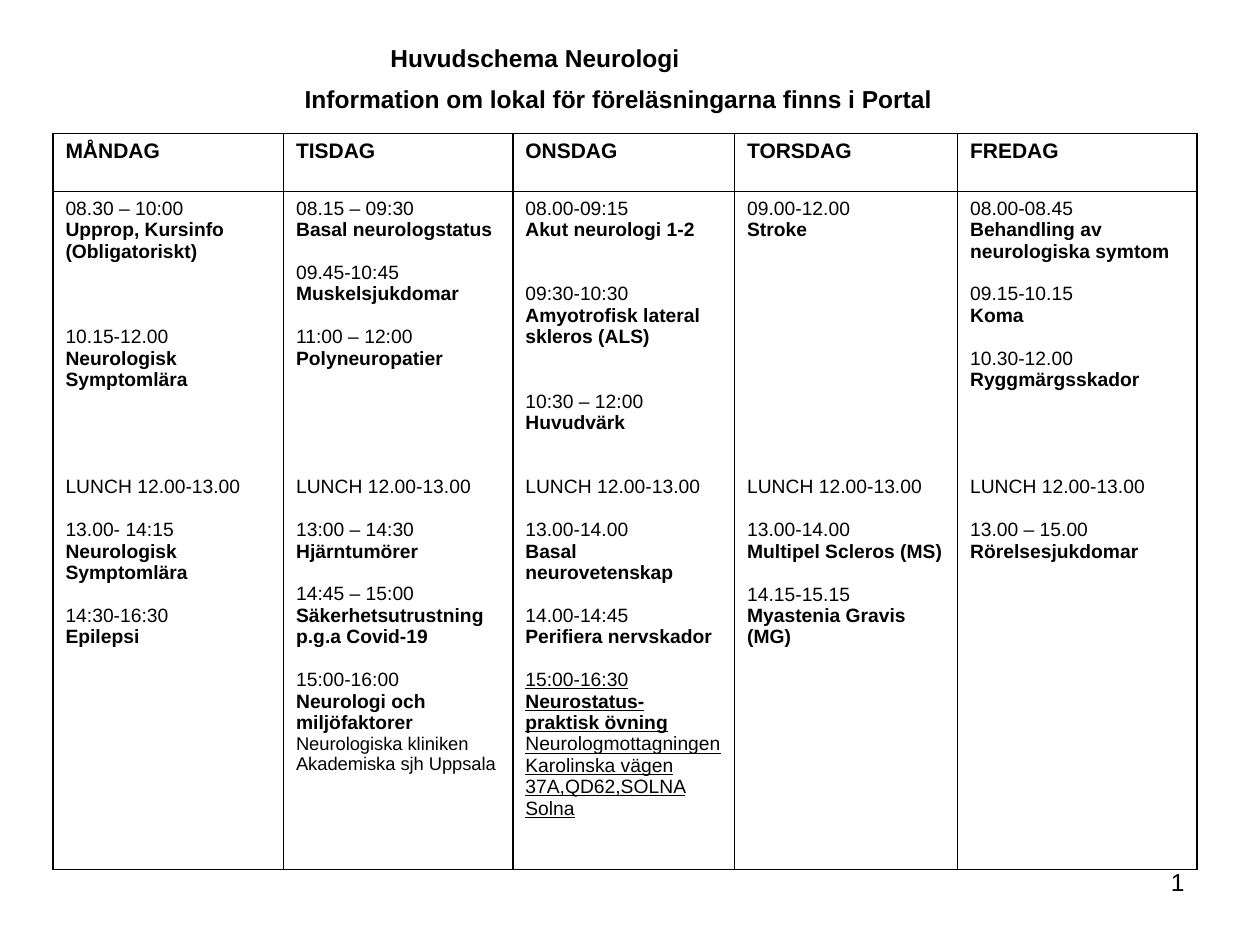
from dataclasses import dataclass

from lxml import etree
from pptx import Presentation
from pptx.dml.color import RGBColor
from pptx.enum.text import PP_ALIGN
from pptx.oxml.ns import qn
from pptx.util import Inches, Pt

BLACK = RGBColor(0, 0, 0)
WHITE = RGBColor(255, 255, 255)
FONT = "Arial"
BODY_SIZE = 11
LINE_HEIGHT = 12.25  # points per line of body text
COLUMN_WIDTHS = (1.83, 1.82, 1.76, 1.77, 1.9)
ROW_HEIGHTS = (0.46, 5.38)


@dataclass
class Session:
    """One timetable entry; gap counts the free lines above it."""
    gap: int
    time: str
    topics: tuple = ()
    places: tuple = ()
    place_size: float = BODY_SIZE
    underline: bool = False


def lunch(gap):
    return Session(gap, "LUNCH 12.00-13.00")


WEEK = {
    "MÅNDAG": [
        Session(0, "08.30 – 10:00", ("Upprop, Kursinfo", "(Obligatoriskt)")),
        Session(3, "10.15-12.00", ("Neurologisk", "Symptomlära")),
        lunch(4),
        Session(1, "13.00- 14:15", ("Neurologisk", "Symptomlära")),
        Session(1, "14:30-16:30", ("Epilepsi",)),
    ],
    "TISDAG": [
        Session(0, "08.15 – 09:30", ("Basal neurologstatus",)),
        Session(1, "09.45-10:45", ("Muskelsjukdomar",)),
        Session(1, "11:00 – 12:00", ("Polyneuropatier",)),
        lunch(5),
        Session(1, "13:00 – 14:30", ("Hjärntumörer",)),
        Session(1, "14:45 – 15:00", ("Säkerhetsutrustning p.g.a Covid-19",)),
        Session(1, "15:00-16:00", ("Neurologi och miljöfaktorer",),
                ("Neurologiska kliniken", "Akademiska sjh Uppsala"), place_size=10.5),
    ],
    "ONSDAG": [
        Session(0, "08.00-09:15", ("Akut neurologi 1-2",)),
        Session(2, "09:30-10:30", ("Amyotrofisk lateral skleros (ALS)",)),
        Session(2, "10:30 – 12:00", ("Huvudvärk",)),
        lunch(2),
        Session(1, "13.00-14.00", ("Basal neurovetenskap",)),
        Session(1, "14.00-14:45", ("Perifiera nervskador",)),
        Session(1, "15:00-16:30", ("Neurostatus- praktisk övning",),
                ("Neurologmottagningen", "Karolinska vägen 37A,QD62,SOLNA Solna"),
                underline=True),
    ],
    "TORSDAG": [
        Session(0, "09.00-12.00", ("Stroke",)),
        lunch(11),
        Session(1, "13.00-14.00", ("Multipel Scleros (MS)",)),
        Session(1, "14.15-15.15", ("Myastenia Gravis (MG)",)),
    ],
    "FREDAG": [
        Session(0, "08.00-08.45", ("Behandling av neurologiska symtom",)),
        Session(1, "09.15-10.15", ("Koma",)),
        Session(1, "10.30-12.00", ("Ryggmärgsskador",)),
        lunch(4),
        Session(1, "13.00 – 15.00", ("Rörelsesjukdomar",)),
    ],
}


def add_line(frame, text, size, space_before=0, **font_format):
    """Fill the first empty paragraph of the frame, or append a new one."""
    paragraph = frame.paragraphs[0]
    if paragraph.runs:
        paragraph = frame.add_paragraph()
    paragraph.space_before = Pt(space_before)
    run = paragraph.add_run()
    run.text = text
    for name, value in {"name": FONT, "size": Pt(size), **font_format}.items():
        setattr(run.font, name, value)
    run.font.color.rgb = BLACK
    return paragraph


def add_text_frame(slide, left, top, width, height):
    frame = slide.shapes.add_textbox(left, top, width, height).text_frame
    frame.word_wrap = True
    return frame


def style_cell(cell):
    properties = cell._tc.get_or_add_tcPr()
    for side in ("a:lnL", "a:lnR", "a:lnT", "a:lnB"):
        border = etree.SubElement(properties, qn(side), w=str(Pt(1)))
        paint = etree.SubElement(border, qn("a:solidFill"))
        etree.SubElement(paint, qn("a:srgbClr"), val=str(BLACK))
    cell.fill.solid()
    cell.fill.fore_color.rgb = WHITE


def fill_day(frame, sessions):
    for session in sessions:
        underline = session.underline
        add_line(frame, session.time, BODY_SIZE, session.gap * LINE_HEIGHT,
                 bold=False, underline=underline)
        for topic in session.topics:
            add_line(frame, topic, BODY_SIZE, bold=True, underline=underline)
        for place in session.places:
            add_line(frame, place, session.place_size, bold=False, underline=underline)


def add_heading(slide, left, top, width, height):
    frame = add_text_frame(slide, left, top, width, height)
    for text, indent, space in (
        ("Huvudschema Neurologi", 1.7, 0),
        ("Information om lokal för föreläsningarna finns i Portal", 1.02, 7),
    ):
        paragraph = add_line(frame, text, 14, space, bold=True)
        paragraph._p.get_or_add_pPr().set("marL", str(Inches(indent)))


def add_timetable(slide, left, top, width, height):
    table = slide.shapes.add_table(2, len(WEEK), left, top, width, height).table
    for column, column_width in zip(table.columns, COLUMN_WIDTHS):
        column.width = Inches(column_width)
    for row, row_height in zip(table.rows, ROW_HEIGHTS):
        row.height = Inches(row_height)
    for cell in table.iter_cells():
        style_cell(cell)
    for index, (day, sessions) in enumerate(WEEK.items()):
        add_line(table.cell(0, index).text_frame, day, 12, bold=True)
        fill_day(table.cell(1, index).text_frame, sessions)


def add_page_number(slide, left, top, width, height):
    frame = add_text_frame(slide, left, top, width, height)
    add_line(frame, "1", 14).alignment = PP_ALIGN.RIGHT


def main():
    presentation = Presentation()
    presentation.slide_width = Inches(10)
    presentation.slide_height = Inches(7.5)
    slide = presentation.slides.add_slide(presentation.slide_layouts[6])
    add_timetable(slide, Inches(0.42), Inches(1.06),
                  Inches(sum(COLUMN_WIDTHS)), Inches(sum(ROW_HEIGHTS)))
    add_heading(slide, Inches(1.3), Inches(0.29), Inches(7.4), Inches(0.69))
    add_page_number(slide, Inches(7.17), Inches(6.83), Inches(2.33), Inches(0.52))
    presentation.save("out.pptx")


if __name__ == "__main__":
    main()
